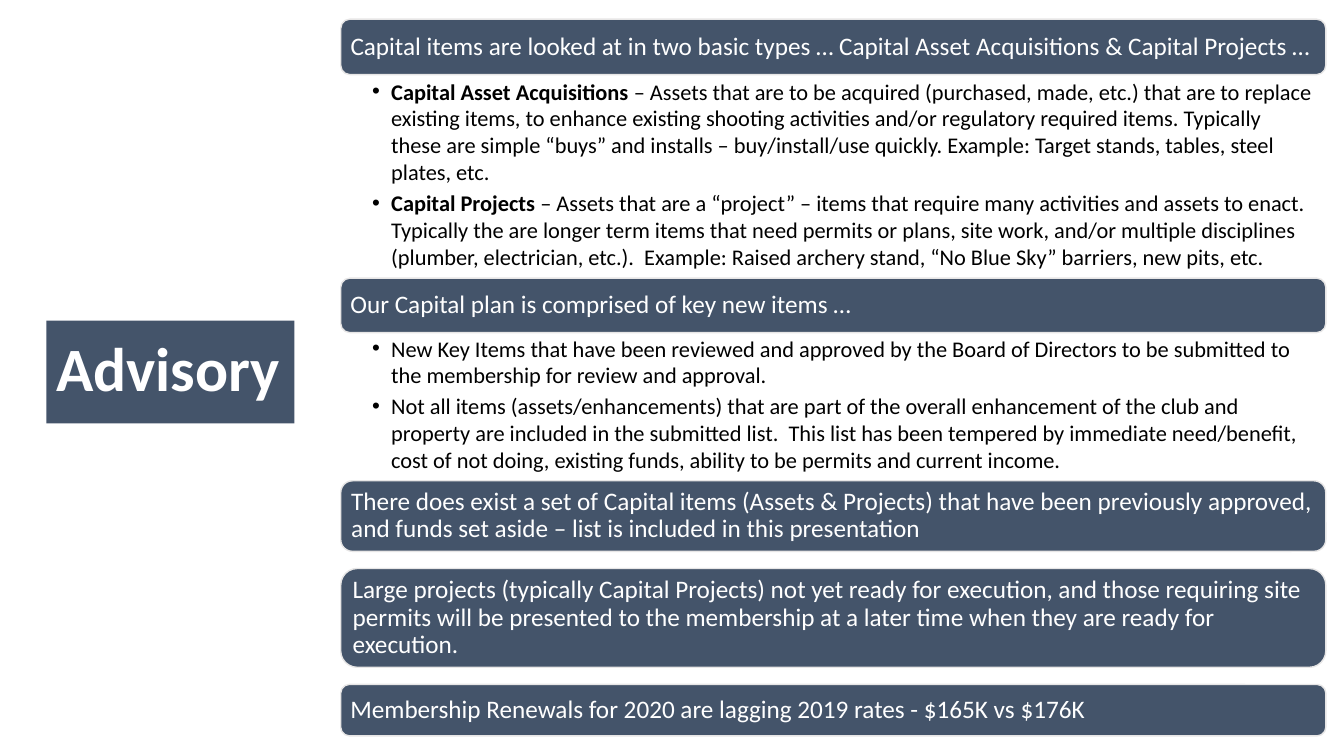
"""Build the capital plan advisory slide."""
from pptx import Presentation
from pptx.dml.color import RGBColor
from pptx.enum import shapes, text
from pptx.util import Inches, Pt

SLATE = RGBColor(0x44, 0x54, 0x6A)
PALE = RGBColor(0xE7, 0xE6, 0xE6)
WHITE = RGBColor(0xFF, 0xFF, 0xFF)
BLACK = RGBColor(0, 0, 0)

COLUMN_LEFT, COLUMN_WIDTH = 3.38, 9.77

BANNERS = [
    (0.19, 0.55, "Capital items are looked at in two basic types … "
     "Capital Asset Acquisitions & Capital Projects …"),
    (2.76, 0.54, "Our Capital plan is comprised of key new items …"),
    (4.77, 0.7, "There does exist a set of Capital items (Assets & Projects) that have been "
     "previously approved, and funds set aside – list is included in this presentation"),
    (5.64, 0.98, "Large projects (typically Capital Projects) not yet ready for execution, and "
     "those requiring site permits will be presented to the membership at a later time when "
     "they are ready for execution."),
    (6.79, 0.51, "Membership Renewals for 2020 are lagging 2019 rates - $165K vs $176K"),
]

CAPITAL_TYPES = [
    ("Capital Asset Acquisitions ",
     "– Assets that are to be acquired (purchased, made, etc.) that are to replace existing "
     "items, to enhance existing shooting activities and/or regulatory required items. "
     "Typically these are simple “buys” and installs – buy/install/use quickly. "
     "Example: Target stands, tables, steel plates, etc."),
    ("Capital Projects ",
     "– Assets that are a “project” – items that require many activities and assets to enact. "
     "Typically the are longer term items that need permits or plans, site work, and/or "
     "multiple disciplines (plumber, electrician, etc.).  Example: Raised archery stand, "
     "“No Blue Sky” barriers, new pits, etc."),
]

KEY_ITEMS = [
    ("", "New Key Items that have been reviewed and approved by the Board of Directors to be "
     "submitted to the membership for review and approval."),
    ("", "Not all items (assets/enhancements) that are part of the overall enhancement of the "
     "club and property are included in the submitted list.  This list has been tempered by "
     "immediate need/benefit, cost of not doing, existing funds, ability to be permits and "
     "current income."),
]


class AdvisorySlide:
    """Hold the style and the slide, and add each kind of element."""

    font_name = "Calibri"

    def __init__(self, presentation):
        self.slide = presentation.slides.add_slide(presentation.slide_layouts[3])

    def place(self, shape, left, top, width, height):
        shape.left, shape.top = Inches(left), Inches(top)
        shape.width, shape.height = Inches(width), Inches(height)

    def frame(self, shape, anchor, margins):
        frame = shape.text_frame
        frame.word_wrap = True
        frame.auto_size = text.MSO_AUTO_SIZE.NONE
        frame.vertical_anchor = anchor
        (frame.margin_left, frame.margin_top,
         frame.margin_right, frame.margin_bottom) = map(Inches, margins)
        return frame

    def style(self, paragraph, size, color, line_spacing):
        paragraph.alignment = text.PP_ALIGN.LEFT
        paragraph.line_spacing = line_spacing
        paragraph.space_before = Pt(0)
        paragraph.font.name = self.font_name
        paragraph.font.size = Pt(size)
        paragraph.font.color.rgb = color

    def title(self, words, left, top, width, height):
        shape = self.slide.shapes.title
        self.place(shape, left, top, width, height)
        shape.fill.solid()
        shape.fill.fore_color.rgb = SLATE
        frame = self.frame(shape, text.MSO_ANCHOR.MIDDLE, (0.1, 0.05, 0.1, 0.05))
        frame.text = words
        self.style(frame.paragraphs[0], 44, WHITE, 0.9)
        frame.paragraphs[0].font.bold = True

    def banner(self, top, height, words):
        shape = self.slide.shapes.add_shape(
            shapes.MSO_SHAPE.ROUNDED_RECTANGLE, Inches(COLUMN_LEFT), Inches(top),
            Inches(COLUMN_WIDTH), Inches(height))
        shape.shadow.inherit = False
        shape.fill.solid()
        shape.fill.fore_color.rgb = SLATE
        shape.line.color.rgb = PALE
        shape.line.width = Pt(1)
        frame = self.frame(shape, text.MSO_ANCHOR.MIDDLE, (0.07,) * 4)
        frame.text = words
        self.style(frame.paragraphs[0], 18, WHITE, 0.9)

    def bullets(self, index, top, height, items):
        shape = self.slide.placeholders[index]
        self.place(shape, COLUMN_LEFT, top, COLUMN_WIDTH, height)
        frame = self.frame(shape, text.MSO_ANCHOR.TOP, (0.31, 0.02, 0.12, 0.02))
        for number, (lead, words) in enumerate(items):
            paragraph = frame.add_paragraph() if number else frame.paragraphs[0]
            if lead:
                run = paragraph.add_run()
                run.text = lead
                run.font.bold = True
            paragraph.add_run().text = words
            self.style(paragraph, 16, BLACK, 1.0)
            paragraph.space_after = Pt(3)
            properties = paragraph._p.get_or_add_pPr()
            properties.set("marL", str(Inches(0.19)))
            properties.set("indent", str(-Inches(0.19)))


def main():
    presentation = Presentation()
    presentation.slide_width = Inches(13.33)
    presentation.slide_height = Inches(7.5)
    advisory = AdvisorySlide(presentation)
    advisory.title("Advisory", 0.46, 3.18, 2.46, 1.02)
    advisory.bullets(1, 0.75, 2.02, CAPITAL_TYPES)
    advisory.bullets(2, 3.3, 1.47, KEY_ITEMS)
    for top, height, words in BANNERS:
        advisory.banner(top, height, words)
    presentation.save("out.pptx")


if __name__ == "__main__":
    main()
